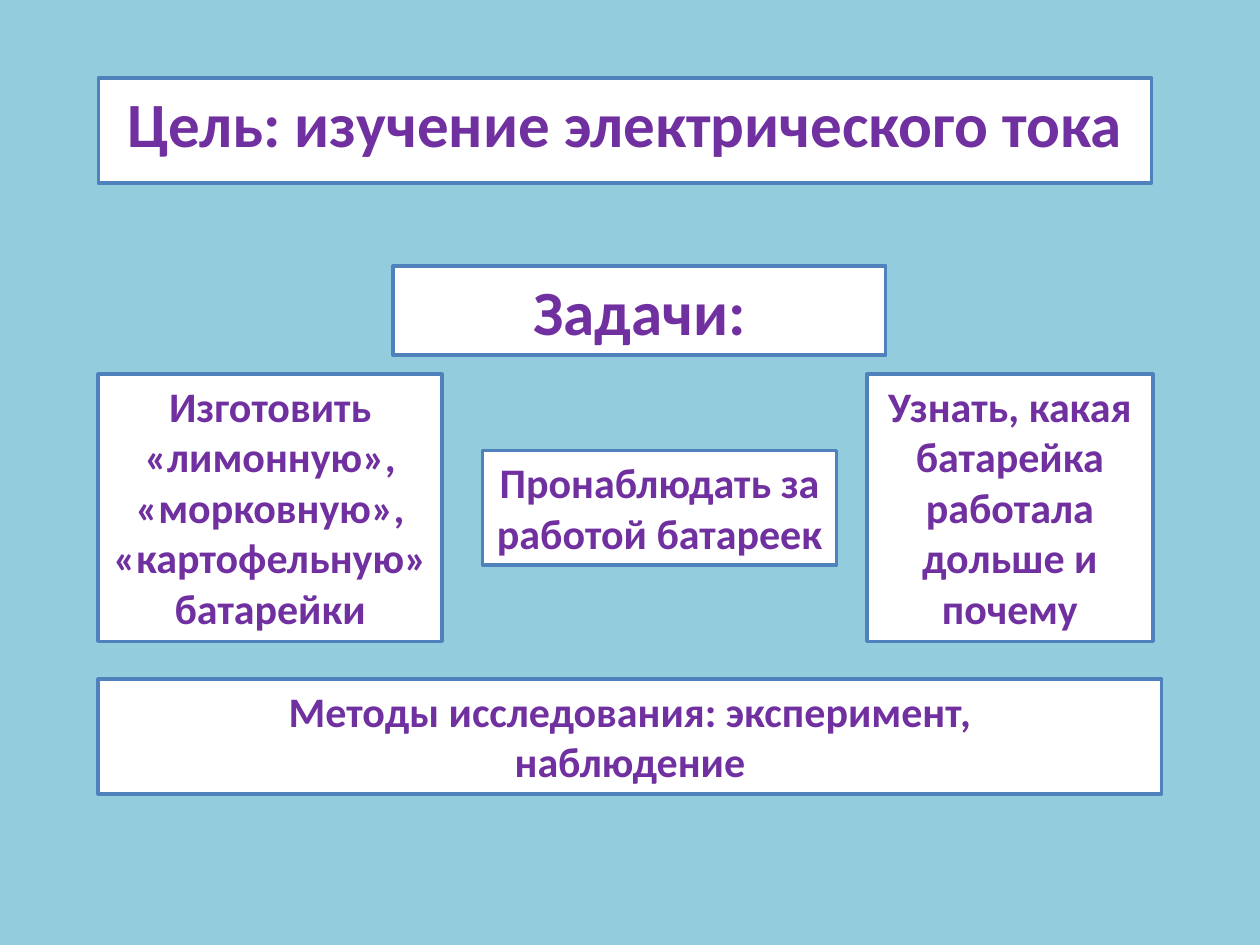
from pptx import Presentation
from pptx.dml.color import RGBColor
from pptx.enum.shapes import MSO_SHAPE
from pptx.enum.text import MSO_ANCHOR, MSO_AUTO_SIZE, PP_ALIGN
from pptx.util import Inches, Pt

SKY = RGBColor(0x93, 0xCD, 0xDD)
WHITE = RGBColor(0xFF, 0xFF, 0xFF)
BLUE = RGBColor(0x4F, 0x81, 0xBD)
PURPLE = RGBColor(0x70, 0x30, 0xA0)

LEFT = 0.78
HEADING_SIZE, BODY_SIZE = 36, 24
TASKS_TOP, TASKS_HEIGHT = 2.97, 2.12
# left, width, height, text
TASKS = [
    (LEFT, 2.73, 2.12, "Изготовить «лимонную», «морковную», «картофельную» батарейки"),
    (3.83, 2.81, 0.91, "Пронаблюдать за работой батареек"),
    (6.88, 2.27, 2.12, "Узнать, какая батарейка работала дольше и почему"),
]


def style_box(box, text, size):
    """Give a box its white fill, blue frame and bold centred text."""
    box.fill.solid()
    box.fill.fore_color.rgb = WHITE
    box.line.color.rgb = BLUE
    box.line.width = Pt(2)
    frame = box.text_frame
    frame.text = text
    frame.word_wrap = True
    frame.auto_size = MSO_AUTO_SIZE.SHAPE_TO_FIT_TEXT
    frame.vertical_anchor = MSO_ANCHOR.TOP
    for para in frame.paragraphs:
        para.alignment = PP_ALIGN.CENTER
        for span in para.runs:
            span.font.name = "Calibri"
            span.font.size = Pt(size)
            span.font.bold = True
            span.font.color.rgb = PURPLE


def add_goal(slide, left, top, width, height):
    title = slide.shapes.title
    title.left, title.top = Inches(left), Inches(top)
    title.width, title.height = Inches(width), Inches(height)
    style_box(title, "Цель: изучение электрического тока", HEADING_SIZE)


def add_box(slide, left, top, width, height, text, size=BODY_SIZE):
    box = slide.shapes.add_shape(
        MSO_SHAPE.RECTANGLE, Inches(left), Inches(top), Inches(width), Inches(height))
    box.shadow.inherit = False
    style_box(box, text, size)


def add_tasks(slide, top, row_height):
    """Place the task boxes side by side, centred vertically in the row."""
    for left, width, height, text in TASKS:
        add_box(slide, left, top + (row_height - height) / 2, width, height, text)


def main():
    deck = Presentation()
    deck.slide_width, deck.slide_height = Inches(10), Inches(7.5)
    slide = deck.slides.add_slide(deck.slide_layouts.get_by_name("Title Only"))
    slide.background.fill.solid()
    slide.background.fill.fore_color.rgb = SKY

    add_goal(slide, LEFT, 0.62, 8.36, 0.71)
    add_box(slide, 3.12, 2.11, 3.91, 0.71, "Задачи:", HEADING_SIZE)
    add_tasks(slide, TASKS_TOP, TASKS_HEIGHT)
    add_box(slide, LEFT, 5.39, 8.44, 0.91,
            "Методы исследования: эксперимент,\nнаблюдение")
    deck.save("out.pptx")


if __name__ == "__main__":
    main()
